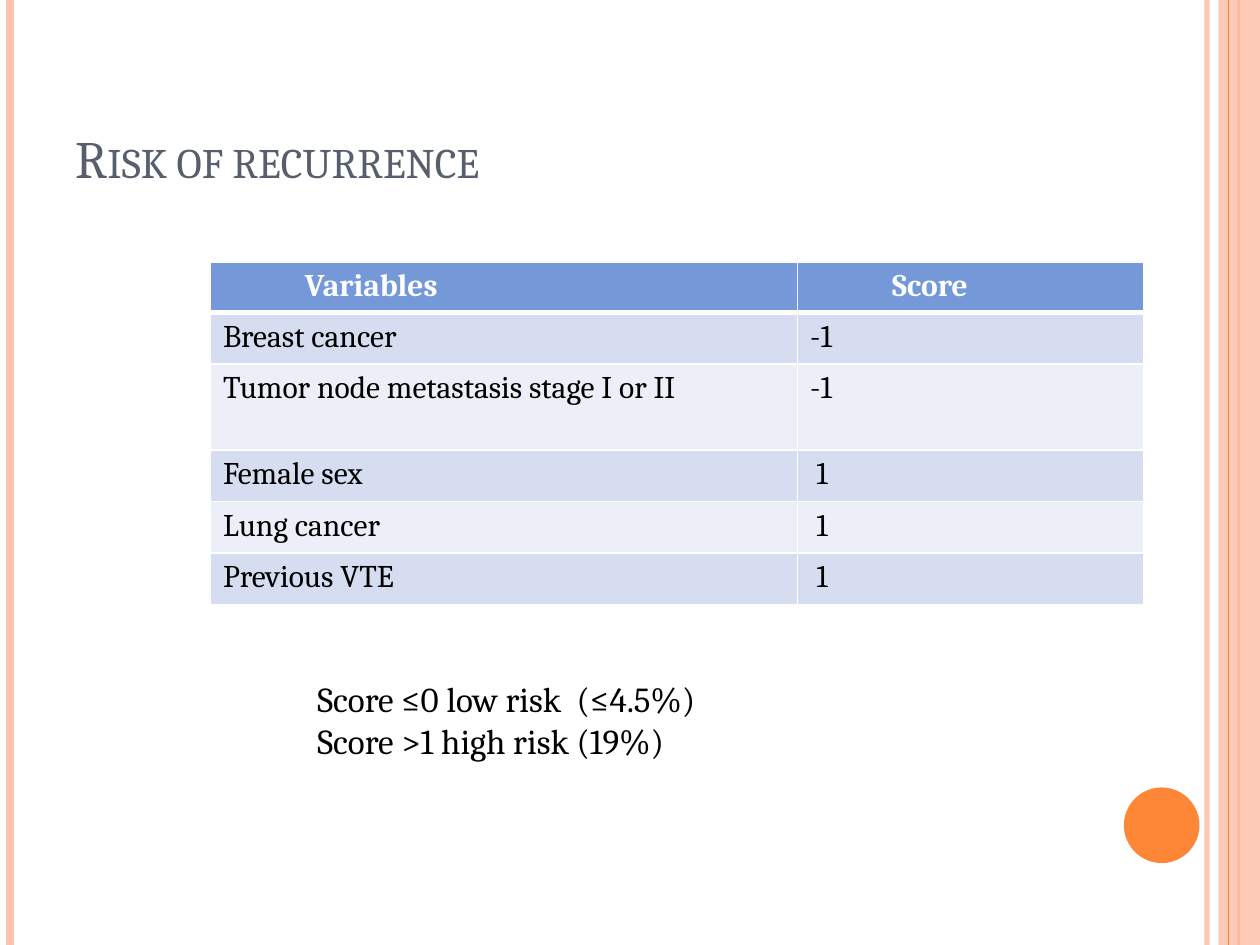
from dataclasses import dataclass

from pptx import Presentation
from pptx.dml.color import RGBColor
from pptx.enum.shapes import MSO_CONNECTOR, MSO_SHAPE
from pptx.enum.text import MSO_ANCHOR
from pptx.oxml.ns import qn
from pptx.util import Inches, Pt
from lxml.etree import SubElement


@dataclass(frozen=True)
class Theme:
    font: str = "Cambria"
    title: str = "575F6D"
    text: str = "000000"
    white: str = "FFFFFF"
    accent: str = "FE8637"
    pale: str = "FEC3AE"
    header: str = "7598D9"
    bands: tuple = ("D6DDF1", "ECEFF8")
    title_size: int = 30
    table_size: int = 18
    note_size: int = 20


THEME = Theme()
WIDTH, HEIGHT = 10, 7.5
HEADERS = ("Variables", "Score")
ROWS = (
    ("Breast cancer", "-1"),
    ("Tumor node metastasis stage I or II", "-1"),
    ("Female sex", "1"),
    ("Lung cancer", "1"),
    ("Previous VTE", "1"),
)
COL_WIDTHS = (4.66, 2.75)
ROW_HEIGHTS = (0.4, 0.41, 0.68, 0.41, 0.41, 0.41)
CELL_MARGIN, HEADER_MARGIN, POSITIVE_MARGIN = 0.1, 0.75, 0.15


def rgb(value):
    return RGBColor.from_string(value)


def set_alpha(fill_parent, percent):
    """Make the solid fill directly under an element partly transparent."""
    color = fill_parent.find(qn("a:solidFill"))[0]
    SubElement(color, qn("a:alpha"), val=str(percent * 1000))


def style_paragraph(p, size, color, bold=False):
    p.font.name = THEME.font
    p.font.size = Pt(size)
    p.font.bold = bold
    p.font.color.rgb = rgb(color)


def add_stripe(slide, x, color, width, alpha=None):
    """Draw a vertical line over the full slide height."""
    line = slide.shapes.add_connector(
        MSO_CONNECTOR.STRAIGHT, Inches(x), 0, Inches(x), Inches(HEIGHT))
    line.line.color.rgb = rgb(color)
    line.line.width = Pt(width)
    sp_pr = line._element.spPr
    SubElement(sp_pr, qn("a:effectLst"))
    if alpha:
        set_alpha(sp_pr.find(qn("a:ln")), alpha)


def add_filled(slide, kind, box, color, alpha=None):
    sp = slide.shapes.add_shape(kind, *map(Inches, box))
    sp.shadow.inherit = False
    sp.fill.solid()
    sp.fill.fore_color.rgb = rgb(color)
    sp.line.fill.background()
    if alpha:
        set_alpha(sp._element.spPr, alpha)


def add_text(slide, box, lines, size, color, anchor=MSO_ANCHOR.TOP):
    tf = slide.shapes.add_textbox(*map(Inches, box)).text_frame
    tf.word_wrap = True
    tf.vertical_anchor = anchor
    tf.text = "\n".join(lines)
    for p in tf.paragraphs:
        style_paragraph(p, size, color)
    return tf


def add_title(slide, text):
    tf = add_text(slide, (0.5, 0.3, 8.17, 1.25), [text],
                  THEME.title_size, THEME.title, MSO_ANCHOR.BOTTOM)
    tf.paragraphs[0].runs[0].font._element.set("cap", "small")


def set_borders(cell, bottom):
    tc_pr = cell._tc.get_or_add_tcPr()
    for side, width in (("L", 1), ("R", 1), ("T", 1), ("B", bottom)):
        ln = SubElement(tc_pr, qn(f"a:ln{side}"), w=str(Pt(width)))
        fill = SubElement(ln, qn("a:solidFill"))
        SubElement(fill, qn("a:srgbClr"), val=THEME.white)


def fill_cell(cell, text, fill, color, margin, bold=False, bottom=1):
    cell.text = text
    cell.margin_left = Inches(margin)
    style_paragraph(cell.text_frame.paragraphs[0], THEME.table_size, color, bold)
    set_borders(cell, bottom)
    cell.fill.solid()
    cell.fill.fore_color.rgb = rgb(fill)


def add_score_table(slide):
    table = slide.shapes.add_table(
        len(ROW_HEIGHTS), len(COL_WIDTHS), Inches(1.67), Inches(2.08),
        Inches(sum(COL_WIDTHS)), Inches(sum(ROW_HEIGHTS))).table
    for column, width in zip(table.columns, COL_WIDTHS):
        column.width = Inches(width)
    for row, height in zip(table.rows, ROW_HEIGHTS):
        row.height = Inches(height)

    for c, text in enumerate(HEADERS):
        fill_cell(table.cell(0, c), text, THEME.header, THEME.white,
                  HEADER_MARGIN, bold=True, bottom=3)
    for r, values in enumerate(ROWS):
        for c, text in enumerate(values):
            margin = POSITIVE_MARGIN if text == "1" else CELL_MARGIN
            fill_cell(table.cell(r + 1, c), text, THEME.bands[r % 2],
                      THEME.text, margin)


def add_decoration(slide):
    add_stripe(slide, 9.58, THEME.pale, 3, alpha=93)
    add_stripe(slide, 0.08, THEME.pale, 4.5)
    add_stripe(slide, 9.83, THEME.accent, 1.5)
    add_filled(slide, MSO_SHAPE.RECTANGLE, (9.67, 0, 0.33, HEIGHT),
               THEME.pale, alpha=87)
    add_stripe(slide, 9.75, THEME.accent, 0.75)
    add_filled(slide, MSO_SHAPE.OVAL, (8.92, 6.25, 0.6, 0.6), THEME.accent)


def main():
    prs = Presentation()
    prs.slide_width, prs.slide_height = Inches(WIDTH), Inches(HEIGHT)
    slide = prs.slides.add_slide(prs.slide_layouts[6])
    add_decoration(slide)
    add_title(slide, "Risk of recurrence")
    add_score_table(slide)
    add_text(slide, (2.42, 5.33, 3.92, 0.77),
             ["Score ≤0 low risk  (≤4.5%)", "Score >1 high risk (19%)"],
             THEME.note_size, THEME.text)
    prs.save("out.pptx")


if __name__ == "__main__":
    main()
